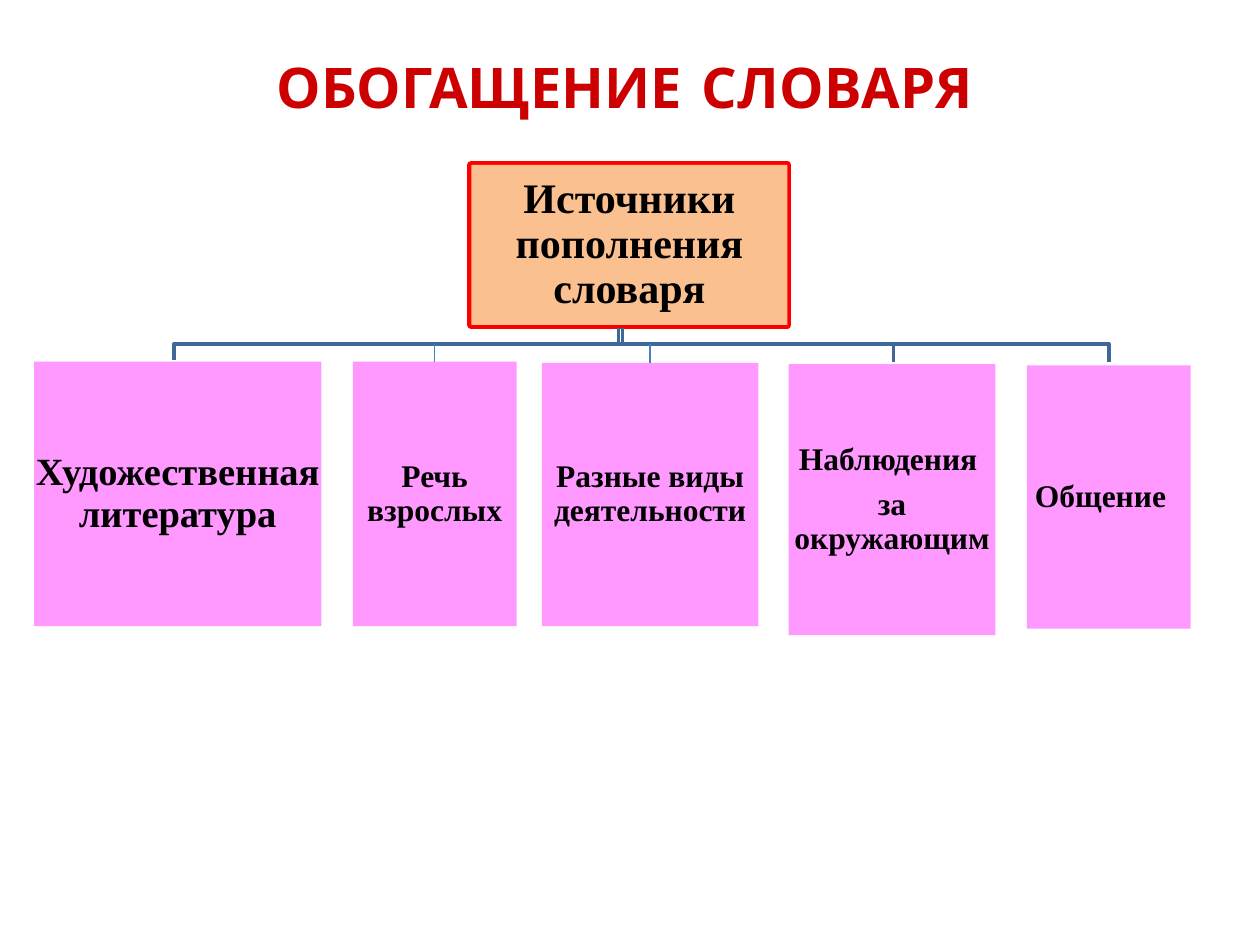
from lxml import etree
from pptx import Presentation
from pptx import util as u
from pptx.dml.color import RGBColor
from pptx.enum import shapes, text
from pptx.oxml import ns

FONT = "Times New Roman"
PINK = "FF99FF"
TRUNK_Y, BUS_Y, BRANCH_Y = 2.6, 2.73, 2.87

SOURCES = [
    ((0.27, 2.87, 2.28, 2.1), ["Художественная литература"], 22, 0.01),
    ((2.8, 2.87, 1.3, 2.1), ["Речь взрослых"], 18, 0.01),
    ((4.3, 2.88, 1.72, 2.09), ["Разные виды деятельности"], 18, 0.01),
    ((6.26, 2.89, 1.64, 2.15), ["Наблюдения ", "за окружающим"], 18, 0.01),
    ((8.15, 2.9, 1.3, 2.09), ["Общение"], 18, 0.14),
]
ELBOWS = [(4.91, 1.38), (4.94, 7.09), (4.91, 8.8)]
DROPS = [(3.45, 2.87), (5.16, 2.88)]


def color(value):
    return RGBColor.from_string(value)


def add_run(paragraph, words, size, font, ink):
    run = paragraph.add_run()
    run.text = words
    run.font.size = u.Pt(size)
    run.font.name = font
    run.font.bold = True
    run.font.color.rgb = color(ink)


def set_line(line, ink, width):
    line.color.rgb = color(ink)
    line.width = u.Pt(width)


def add_title(slide, box):
    title = slide.shapes.title
    title.left, title.top, title.width, title.height = map(u.Inches, box)
    frame = title.text_frame
    frame.word_wrap = True
    frame.vertical_anchor = text.MSO_ANCHOR.MIDDLE
    heading = frame.paragraphs[0]
    heading.alignment = text.PP_ALIGN.CENTER
    add_run(heading, "ОБОГАЩЕНИЕ СЛОВАРЯ", 32, "Comic Neue", "CC0000")


def add_panel(group, box, fill):
    panel = group.shapes.add_shape(shapes.MSO_SHAPE.RECTANGLE, *map(u.Inches, box))
    panel.shadow.inherit = False
    panel.fill.solid()
    panel.fill.fore_color.rgb = color(fill)
    return panel


def add_node(slide, box, lines, size, right_inset, border_fill, fill, edge, edge_width):
    group = slide.shapes.add_group_shape()
    border = add_panel(group, box, border_fill)
    set_line(border.line, edge, edge_width)
    face = add_panel(group, box, fill)
    face.line.fill.background()
    frame = face.text_frame
    frame.word_wrap = True
    frame.vertical_anchor = text.MSO_ANCHOR.MIDDLE
    frame.margin_left = frame.margin_top = frame.margin_bottom = u.Inches(0.01)
    frame.margin_right = u.Inches(right_inset)
    for index, words in enumerate(lines):
        paragraph = frame.add_paragraph() if index else frame.paragraphs[0]
        paragraph.alignment = text.PP_ALIGN.CENTER
        paragraph.line_spacing = 0.9
        paragraph.space_after = u.Pt(size * 0.35)
        add_run(paragraph, words, size, FONT, "000000")


def add_elbow(slide, trunk_x, branch_x):
    route = [(trunk_x, TRUNK_Y), (trunk_x, BUS_Y), (branch_x, BUS_Y), (branch_x, BRANCH_Y)]
    start, *rest = [(u.Inches(x), u.Inches(y)) for x, y in route]
    builder = slide.shapes.build_freeform(*start)
    builder.add_line_segments(rest, close=False)
    elbow = builder.convert_to_shape()
    elbow.shadow.inherit = False
    elbow.fill.background()
    set_line(elbow.line, "3F6797", 2)


def add_drop(slide, x, bottom):
    drop = slide.shapes.add_connector(
        shapes.MSO_CONNECTOR.STRAIGHT,
        u.Inches(x), u.Inches(bottom), u.Inches(x), u.Inches(BUS_Y))
    set_line(drop.line, "4B7EBC", 0.75)
    etree.SubElement(drop._element.spPr, ns.qn("a:effectLst"))


def main():
    deck = Presentation()
    deck.slide_width, deck.slide_height = u.Inches(10), u.Inches(7.5)
    slide = deck.slides.add_slide(deck.slide_layouts[5])
    add_title(slide, (0.67, 0.3, 8.58, 0.77))
    add_node(slide, (3.74, 1.31, 2.51, 1.27), ["Источники пополнения словаря"],
             24, 0.01, "CCC1DA", "FAC090", "FF0000", 4.5)
    for trunk_x, branch_x in ELBOWS:
        add_elbow(slide, trunk_x, branch_x)
    for box, lines, size, right_inset in SOURCES:
        add_node(slide, box, lines, size, right_inset, PINK, PINK, "FFFFFF", 2)
    for x, bottom in DROPS:
        add_drop(slide, x, bottom)
    deck.save("out.pptx")


if __name__ == "__main__":
    main()
